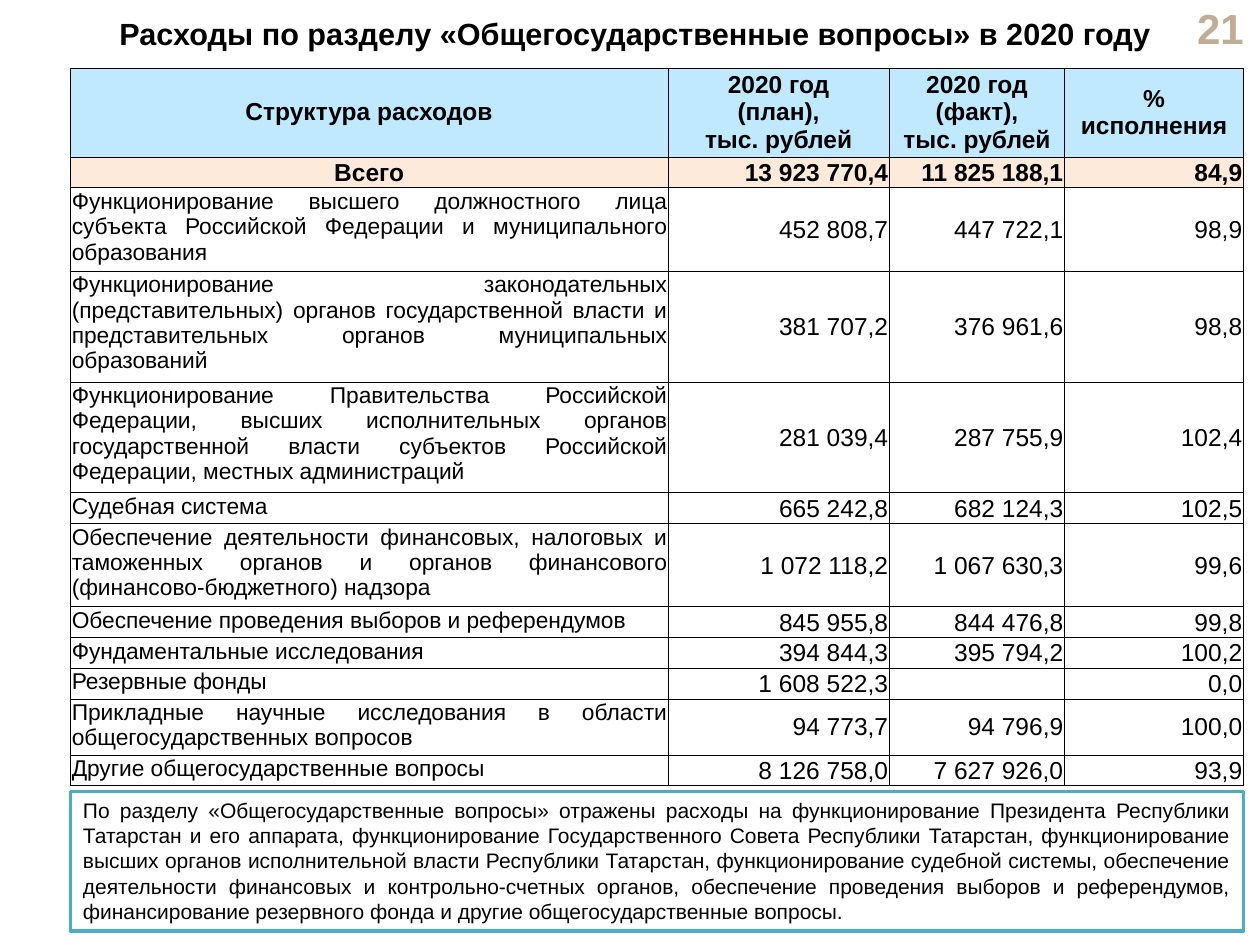
from lxml.etree import SubElement
from pptx import Presentation
from pptx.dml.color import RGBColor
from pptx.enum.shapes import MSO_SHAPE
from pptx.enum.text import MSO_ANCHOR as Anchor, PP_ALIGN as Align
from pptx.oxml.ns import qn
from pptx.util import Inches, Pt

TITLE = "Расходы по разделу «Общегосударственные вопросы» в 2020 году"
PAGE_NUMBER = "21"
HEADER = ("Структура расходов", "2020 год\v(план),\vтыс. рублей",
          "2020 год\v(факт),\vтыс. рублей", "% исполнения")
TOTAL = ("Всего", "13 923 770,4", "11 825 188,1", "84,9")
# Number of text lines, then the cells of the row
EXPENSES = [
    (3, ("Функционирование высшего должностного лица субъекта Российской Федерации "
         "и муниципального образования", "452 808,7", "447 722,1", "98,9")),
    (4, ("Функционирование законодательных (представительных) органов государственной "
         "власти и представительных органов муниципальных образований",
         "381 707,2", "376 961,6", "98,8")),
    (4, ("Функционирование Правительства Российской Федерации, высших исполнительных "
         "органов государственной власти субъектов Российской Федерации, местных "
         "администраций", "281 039,4", "287 755,9", "102,4")),
    (1, ("Судебная система", "665 242,8", "682 124,3", "102,5")),
    (3, ("Обеспечение деятельности финансовых, налоговых и таможенных органов и органов "
         "финансового (финансово-бюджетного) надзора",
         "1 072 118,2", "1 067 630,3", "99,6")),
    (1, ("Обеспечение проведения выборов и референдумов",
         "845 955,8", "844 476,8", "99,8")),
    (1, ("Фундаментальные исследования", "394 844,3", "395 794,2", "100,2")),
    (1, ("Резервные фонды", "1 608 522,3", "", "0,0")),
    (2, ("Прикладные научные исследования в области общегосударственных вопросов",
         "94 773,7", "94 796,9", "100,0")),
    (1, ("Другие общегосударственные вопросы", "8 126 758,0", "7 627 926,0", "93,9")),
]
NOTE = ("По разделу «Общегосударственные вопросы» отражены расходы на функционирование "
        "Президента Республики Татарстан и его аппарата, функционирование "
        "Государственного Совета Республики Татарстан, функционирование высших органов "
        "исполнительной власти Республики Татарстан, функционирование судебной системы, "
        "обеспечение деятельности финансовых и контрольно-счетных органов, обеспечение "
        "проведения выборов и референдумов, финансирование резервного фонда и другие "
        "общегосударственные вопросы.")

COLORS = {"text": "000000", "number": "BFAE96", "header": "C0E9FF", "total": "FDEADA",
          "plain": "FFFFFF", "border": "000000", "frame": "4BACC6"}
FONT = "Arial"
LEFT, WIDTH = 0.56, 9.31
TABLE_TOP, TABLE_HEIGHT = 0.54, 5.68
COLUMN_WIDTHS = (4.74, 1.76, 1.39, 1.42)
HEADER_LINES, SINGLE_LINE = 3.2, 1.1


def color(name):
    return RGBColor.from_string(COLORS[name])


def write(frame, text, size, align, bold=False, ink="text"):
    frame.word_wrap = True
    frame.text = text
    paragraph = frame.paragraphs[0]
    paragraph.alignment = align
    for run in paragraph.runs:
        run.font.name = FONT
        run.font.size = Pt(size)
        run.font.bold = bold
        run.font.color.rgb = color(ink)
    if not text:  # keeps an empty cell from stretching its row
        SubElement(paragraph._p, qn("a:endParaRPr"), sz=str(size * 100))
    return paragraph


def add_borders(cell):
    properties = cell._tc.get_or_add_tcPr()
    for side in ("a:lnL", "a:lnR", "a:lnT", "a:lnB"):
        line = SubElement(properties, qn(side), w=str(Pt(0.25)))
        fill = SubElement(line, qn("a:solidFill"))
        SubElement(fill, qn("a:srgbClr"), val=COLORS["border"])


def style_cell(cell, text, row, column):
    kind = {0: "header", 1: "total"}.get(row, "plain")
    name = kind == "plain" and column == 0
    if name:
        align = Align.JUSTIFY
    elif kind == "header" or column == 0:
        align = Align.CENTER
    else:
        align = Align.RIGHT
    cell.margin_left = cell.margin_right = Inches(0.08 if kind == "header" else 0.01)
    cell.margin_top = Inches(0 if kind == "header" else 0.01)
    cell.margin_bottom = 0
    cell.vertical_anchor = Anchor.TOP if name else Anchor.MIDDLE
    write(cell.text_frame, text, 13 if name else 14, align, bold=kind != "plain")
    add_borders(cell)
    if kind == "plain":
        cell.fill.background()
    else:
        cell.fill.solid()
        cell.fill.fore_color.rgb = color(kind)


def add_expense_table(slide):
    rows = [HEADER, TOTAL] + [cells for _, cells in EXPENSES]
    lines = [HEADER_LINES, SINGLE_LINE] + [max(count, SINGLE_LINE) for count, _ in EXPENSES]
    table = slide.shapes.add_table(
        len(rows), len(COLUMN_WIDTHS), Inches(LEFT), Inches(TABLE_TOP),
        Inches(WIDTH), Inches(TABLE_HEIGHT)).table
    table.horz_banding = False
    for column, width in zip(table.columns, COLUMN_WIDTHS):
        column.width = Inches(width)
    for row, count in zip(table.rows, lines):
        row.height = Inches(TABLE_HEIGHT * count / sum(lines))
    for row, cells in enumerate(rows):
        for column, text in enumerate(cells):
            style_cell(table.cell(row, column), text, row, column)


def add_note(slide):
    box = slide.shapes.add_shape(MSO_SHAPE.RECTANGLE, Inches(LEFT), Inches(6.28),
                                 Inches(WIDTH), Inches(1.11))
    box.shadow.inherit = False
    box.fill.solid()
    box.fill.fore_color.rgb = color("plain")
    box.line.color.rgb = color("frame")
    box.line.width = Pt(2)
    box.text_frame.vertical_anchor = Anchor.TOP
    write(box.text_frame, NOTE, 12, Align.JUSTIFY)


def main():
    presentation = Presentation()
    presentation.slide_width, presentation.slide_height = Inches(10), Inches(7.5)
    slide = presentation.slides.add_slide(presentation.slide_layouts[6])

    number = slide.shapes.add_textbox(Inches(9.33), Inches(0.05), Inches(0.64), Inches(0.34))
    number.text_frame.vertical_anchor = Anchor.MIDDLE
    write(number.text_frame, PAGE_NUMBER, 24, Align.RIGHT, bold=True, ink="number")
    add_expense_table(slide)
    title = slide.shapes.add_textbox(Inches(0.62), Inches(0.15), Inches(8.85), Inches(0.49))
    write(title.text_frame, TITLE, 17.5, Align.CENTER, bold=True).line_spacing = 0.7
    add_note(slide)
    presentation.save("out.pptx")


if __name__ == "__main__":
    main()
